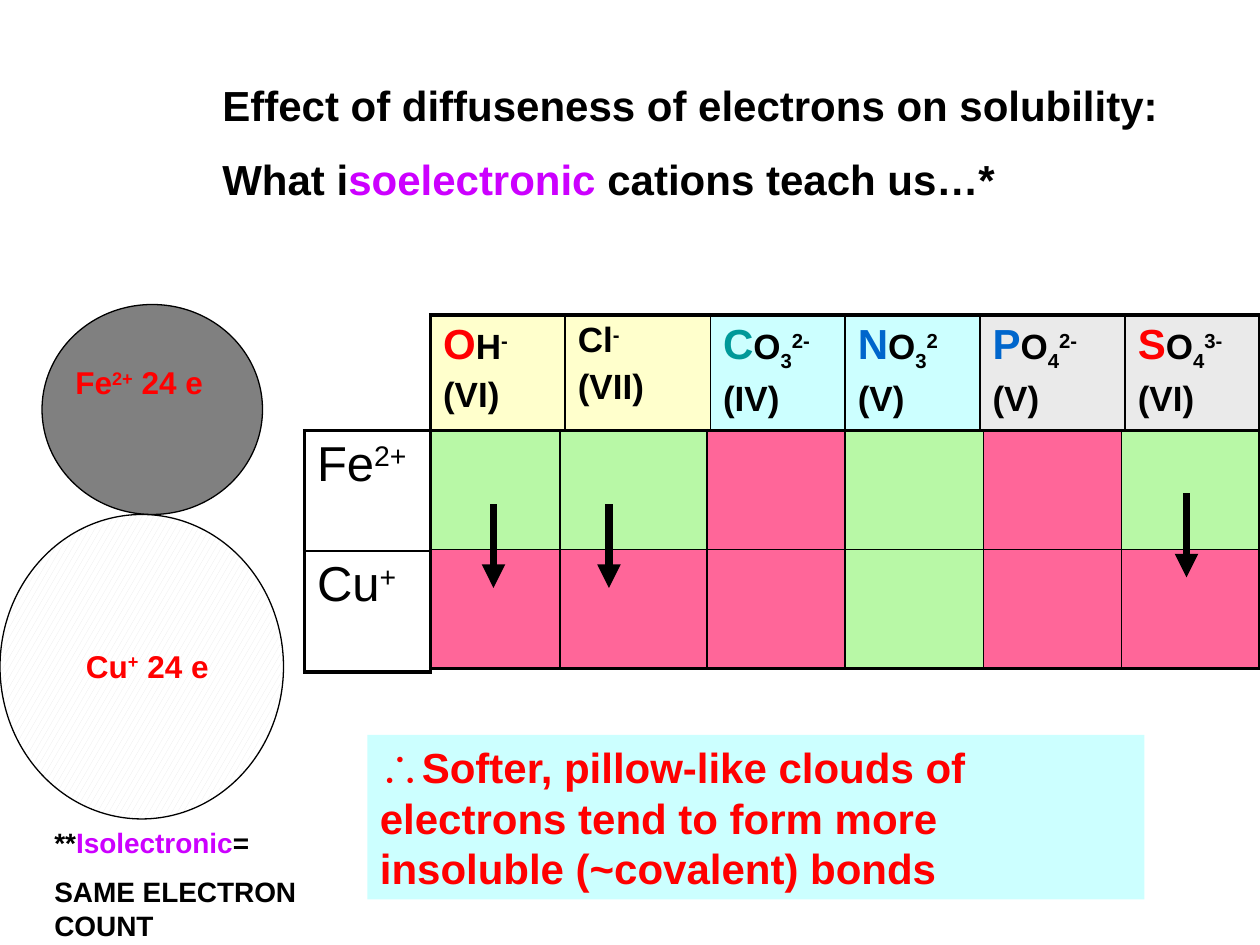
from dataclasses import dataclass
from lxml import etree
from pptx import Presentation
from pptx.dml.color import RGBColor
from pptx.enum.dml import MSO_PATTERN
from pptx.enum.shapes import MSO_CONNECTOR, MSO_SHAPE
from pptx.oxml.ns import qn
from pptx.util import Pt

OVAL, RECT = MSO_SHAPE.OVAL, MSO_SHAPE.RECTANGLE
STRAIGHT = MSO_CONNECTOR.STRAIGHT
CONFETTI = MSO_PATTERN.LARGE_CONFETTI
SUP, SUB = 30000, -25000


@dataclass(frozen=True)
class Theme:
    font: str = "Arial"
    black: str = "000000"
    white: str = "FFFFFF"
    red: str = "FF0000"
    violet: str = "CC00FF"
    teal: str = "009999"
    blue: str = "0066CC"
    cream: str = "FFFFCC"
    aqua: str = "CCFFFF"
    pale: str = "EAEAEA"
    gray: str = "808080"
    green: str = "B8F8A6"
    pink: str = "FF6699"
    label: int = 28
    head: int = 24
    body: int = 20
    tag: int = 18
    note: int = 16
    thick: float = 2.25
    thin: float = 1
    edge: float = 0.75
    arrow: float = 4.5


T = Theme()


def rgb(code):
    return RGBColor.from_string(code)


def add_run(para, text, size, color=T.black, bold=True, shift=0):
    run = para.add_run()
    run.text = text
    font = run.font
    font.name, font.size, font.bold = T.font, Pt(size), bold
    font.color.rgb = rgb(color)
    if shift:
        run._r.get_or_add_rPr().set("baseline", str(shift))


def write(frame, paras, gap=0):
    """Each paragraph is a list of argument tuples for add_run."""
    frame.word_wrap = True
    for i, runs in enumerate(paras):
        para = frame.add_paragraph() if i else frame.paragraphs[0]
        if i:
            para.space_before = Pt(gap)
        for args in runs:
            add_run(para, *args)


def add_text(slide, box, paras, gap=0):
    shape = slide.shapes.add_textbox(*map(Pt, box))
    write(shape.text_frame, paras, gap)


def set_edges(cell, widths):
    props = cell._tc.get_or_add_tcPr()
    for i, (side, width) in enumerate(zip("LRTB", widths)):
        line = etree.Element(qn(f"a:ln{side}"), w=str(Pt(width)))
        fill = etree.SubElement(line, qn("a:solidFill"))
        etree.SubElement(fill, qn("a:srgbClr"), val=T.black)
        props.insert(i, line)


def add_grid(slide, box, cols, rows, fills):
    """Table with thick outer and thin inner borders."""
    frame = slide.shapes.add_table(len(rows), len(cols), *map(Pt, box))
    table = frame.table
    table.first_row = table.horz_banding = False
    for col, width in zip(table.columns, cols):
        col.width = Pt(width)
    for row, height in zip(table.rows, rows):
        row.height = Pt(height)
    for r, line in enumerate(fills):
        for c, color in enumerate(line):
            cell = table.cell(r, c)
            if color:
                cell.fill.solid()
                cell.fill.fore_color.rgb = rgb(color)
            else:
                cell.fill.background()
            outer = (c == 0, c == len(cols) - 1, r == 0, r == len(rows) - 1)
            set_edges(cell, [T.thick if out else T.thin for out in outer])
    return table


def add_ion(slide, box, tag, ion, charge, pattern=False):
    oval = slide.shapes.add_shape(OVAL, *map(Pt, box))
    oval.shadow.inherit = False
    if pattern:
        oval.fill.patterned()
        oval.fill.pattern = CONFETTI
        oval.fill.fore_color.rgb = rgb(T.pale)
        oval.fill.back_color.rgb = rgb(T.white)
    else:
        oval.fill.solid()
        oval.fill.fore_color.rgb = rgb(T.gray)
    oval.line.color.rgb = rgb(T.black)
    oval.line.width = Pt(T.edge)
    add_text(slide, tag, [[(ion, T.tag, T.red),
                           (charge, T.tag, T.red, True, SUP),
                           (" 24 e", T.tag, T.red)]])


def add_heads(slide, box):
    # Lead atom, its colour, rest, subscript, charge, group, fill
    anions = [
        ("O", T.red, "H", "", "-", "(VI)", T.cream),
        ("", T.black, "Cl", "", "-", "(VII)", T.cream),
        ("C", T.teal, "O", "3", "2-", "(IV)", T.aqua),
        ("N", T.blue, "O", "3", "2", "(V)", T.aqua),
        ("P", T.blue, "O", "4", "2-", "(V)", T.pale),
        ("S", T.red, "O", "4", "3-", "(VI)", T.pale),
    ]
    table = add_grid(slide, box, [77, 83, 77, 77, 83, 77], [box[3]],
                     [[anion[-1] for anion in anions]])
    for c, (lead, color, rest, sub, charge, group, _) in enumerate(anions):
        parts = [(lead, T.head, color), (rest, T.body),
                 (sub, T.body, T.black, True, SUB),
                 (charge, T.body, T.black, True, SUP)]
        write(table.cell(0, c).text_frame,
              [[part for part in parts if part[0]], [(group, T.body)]], 4.5)


def add_labels(slide, box):
    table = add_grid(slide, box, [box[2]], [box[3] / 2] * 2, [[None]] * 2)
    for r, (ion, charge) in enumerate([("Fe", "2+"), ("Cu", "+")]):
        write(table.cell(r, 0).text_frame,
              [[(ion, T.label, T.black, False),
                (charge, T.label, T.black, False, SUP)]])


def add_results(slide, box):
    tones = {"g": T.green, "p": T.pink}
    fills = [[tones[key] for key in row] for row in ("ggpgpg", "pppgpp")]
    add_grid(slide, box, [74, 84] + [79] * 4, [box[3] / 2] * 2, fills)
    # Arrows mark the salts that turn insoluble
    left, top = box[:2]
    for dx, dy in [(36, 42), (102, 42), (432, 36)]:
        add_arrow(slide, left + dx, top + dy, 48)


def add_arrow(slide, x, y, drop):
    line = slide.shapes.add_connector(STRAIGHT, Pt(x), Pt(y), Pt(x), Pt(y + drop))
    line.line.color.rgb = rgb(T.black)
    line.line.width = Pt(T.arrow)
    etree.SubElement(line.line._get_or_add_ln(), qn("a:tailEnd"), type="triangle")
    etree.SubElement(line._element.spPr, qn("a:effectLst"))


def add_title(slide, box):
    add_text(slide, box, [
        [("Effect of diffuseness of electrons on solubility:", T.head)],
        [("What i", T.head), ("soelectronic ", T.head, T.violet),
         ("cations teach us…*", T.head)],
    ], 13.5)


def add_moral(slide, box):
    rect = slide.shapes.add_shape(RECT, *map(Pt, box))
    rect.shadow.inherit = False
    rect.fill.solid()
    rect.fill.fore_color.rgb = rgb(T.aqua)
    rect.line.fill.background()
    write(rect.text_frame, [[(
        "∴Softer, pillow-like clouds of electrons tend to form more "
        "insoluble (~covalent) bonds", T.head, T.red)]])
    rect.text_frame.paragraphs[0].alignment = 1


def add_note(slide, box):
    add_text(slide, box, [
        [("**", T.note), ("Isolectronic", T.note, T.violet), ("=", T.note)],
        [("SAME ELECTRON COUNT", T.note)],
    ], 9)


def main():
    deck = Presentation()
    deck.slide_width, deck.slide_height = Pt(720), Pt(540)
    slide = deck.slides.add_slide(deck.slide_layouts[6])
    add_ion(slide, (24, 174, 126, 120), (36, 204, 102, 29), "Fe", "2+")
    add_ion(slide, (0, 294, 162, 174), (42, 366, 90, 29), "Cu", "+", True)
    add_heads(slide, (246, 180, 474, 66))
    add_labels(slide, (174, 246, 72, 138))
    add_results(slide, (246, 246, 474, 136))
    add_title(slide, (120, 42, 570, 80))
    add_moral(slide, (210, 420, 444, 94))
    add_note(slide, (24, 468, 174, 75))
    deck.save("out.pptx")


if __name__ == "__main__":
    main()
